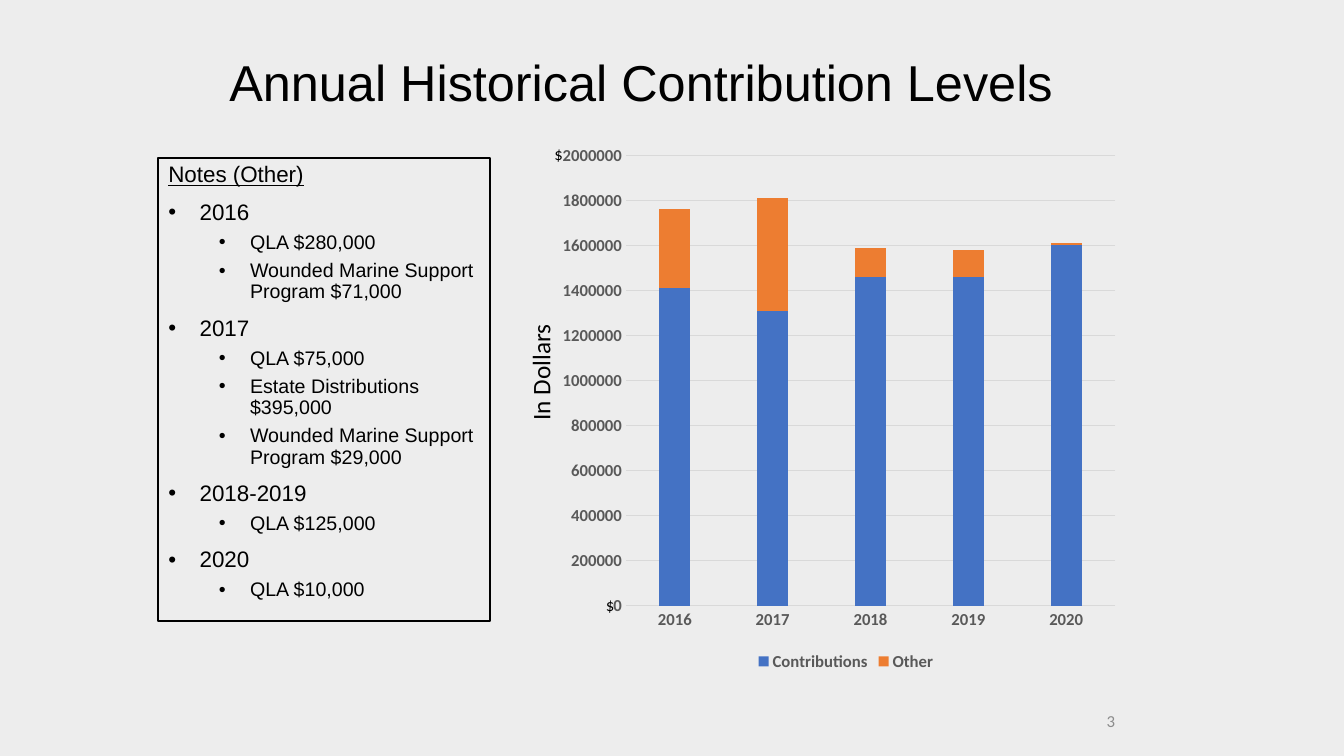
from pptx import Presentation
from pptx.chart.data import CategoryChartData as ChartData
from pptx.dml.color import RGBColor
from pptx.enum.chart import XL_CHART_TYPE as Kind, XL_LEGEND_POSITION as Spot, XL_TICK_MARK as Tick
from pptx.enum.text import MSO_ANCHOR as Anchor, MSO_AUTO_SIZE as Fit, PP_ALIGN as Align
from pptx.oxml import parse_xml
from pptx.oxml.ns import nsdecls
from pptx.util import Inches, Pt

NOTES = [
    ("2016", ["QLA $280,000", "Wounded Marine Support Program $71,000"]),
    ("2017", ["QLA $75,000", "Estate Distributions $395,000",
              "Wounded Marine Support Program $29,000"]),
    ("2018-2019", ["QLA $125,000"]),
    ("2020", ["QLA $10,000"]),
]
YEARS = ["2016", "2017", "2018", "2019", "2020"]
SERIES = [
    ("Contributions", "4472C4", [1410000, 1310000, 1460000, 1460000, 1600000]),
    ("Other", "ED7D31", [350000, 500000, 130000, 120000, 10000]),
]


def color(code):
    return RGBColor.from_string(code)


class Deck:
    ink, gray, rule, back = "000000", "595959", "D9D9D9", "EDEDED"
    head, base = "Arial", "Calibri"

    def __init__(self):
        self.prs = Presentation()
        self.prs.slide_width = Inches(13.33)
        self.prs.slide_height = Inches(7.5)
        self.slide = self.prs.slides.add_slide(self.prs.slide_layouts[1])
        fill = self.slide.background.fill
        fill.solid()
        fill.fore_color.rgb = color(self.back)

    def place(self, shape, box):
        shape.left, shape.top, shape.width, shape.height = map(Inches, box)

    def style(self, font, size, name, code, bold=False):
        font.size, font.name, font.bold = Pt(size), name, bold
        font.color.rgb = color(code)

    def title(self, text, box):
        shape = self.slide.shapes.title
        self.place(shape, box)
        frame = shape.text_frame
        frame.text = text
        frame.auto_size = Fit.NONE
        frame.vertical_anchor = Anchor.BOTTOM
        para = frame.paragraphs[0]
        para.alignment = Align.CENTER
        self.style(para.runs[0].font, 36, self.head, self.ink)

    def point(self, para, text, level=0, mark=True):
        para.text = text
        para.level = level
        para.line_spacing = 0.9
        para.space_before = Pt(5 if level else 10)
        self.style(para.runs[0].font, 14 if level else 16, self.head, self.ink)
        props = para._p.get_or_add_pPr()
        left = 0.31 + 0.5 * level if mark else 0
        props.set("marL", str(Inches(left)))
        props.set("indent", str(Inches(-0.31 if mark else 0)))
        tag = 'a:buChar char="•"' if mark else "a:buNone"
        props.append(parse_xml(f"<{tag} {nsdecls('a')}/>"))

    def notes(self, head, groups, box):
        shape = self.slide.placeholders[1]
        self.place(shape, box)
        shape.line.color.rgb = color(self.ink)
        shape.line.width = Pt(1.5)
        frame = shape.text_frame
        frame.auto_size = Fit.NONE
        first = frame.paragraphs[0]
        self.point(first, head, mark=False)
        first.runs[0].font.underline = True
        for year, items in groups:
            self.point(frame.add_paragraph(), year)
            for item in items:
                self.point(frame.add_paragraph(), item, 1)

    def label(self, text, box, size, code=ink, turn=0, wrap=False,
              align=Align.LEFT, anchor=Anchor.TOP):
        shape = self.slide.shapes.add_textbox(*map(Inches, box))
        shape.rotation = turn
        frame = shape.text_frame
        frame.text = text
        frame.word_wrap = wrap
        frame.vertical_anchor = anchor
        para = frame.paragraphs[0]
        para.alignment = align
        self.style(para.runs[0].font, size, self.base, code)

    def chart(self, years, series, box, area):
        data = ChartData()
        data.categories = years
        for name, _, vals in series:
            data.add_series(name, vals)
        chart = self.slide.shapes.add_chart(
            Kind.COLUMN_STACKED, *map(Inches, box), data).chart
        chart.has_title = False
        self.style(chart.font, 10, self.base, self.ink)
        plot = chart.plots[0]
        plot.gap_width, plot.overlap, plot.vary_by_categories = 219, 100, False
        for bar, (_, code, _) in zip(plot.series, series):
            bar.format.fill.solid()
            bar.format.fill.fore_color.rgb = color(code)
        chart.has_legend = True
        key = chart.legend
        key.position = Spot.BOTTOM
        key.include_in_layout = False
        cats, vals = chart.category_axis, chart.value_axis
        for axis in (cats, vals):
            axis.major_tick_mark = axis.minor_tick_mark = Tick.NONE
            self.style(axis.tick_labels.font, 12, self.base, self.gray, True)
        self.style(key.font, 12, self.base, self.gray, True)
        vals.minimum_scale, vals.maximum_scale, vals.major_unit = 0, 2000000, 200000
        vals.tick_labels.number_format = "General"
        vals.tick_labels.number_format_is_linked = False
        vals.format.line.fill.background()
        vals.has_major_gridlines = True
        for line in (cats.format.line, vals.major_gridlines.format.line):
            line.color.rgb = color(self.rule)
            line.width = Pt(0.75)
        self.layout(chart, box[2:], area)

    def layout(self, chart, size, area):
        part = chart._chartSpace.chart.plotArea
        for old in part.findall("{*}layout"):
            part.remove(old)
        sizes = "".join(f'<c:{tag} val="{val / full}"/>'
                        for tag, val, full in zip("xywh", area, size * 2))
        part.insert(0, parse_xml(
            f'<c:layout {nsdecls("c")}><c:manualLayout><c:layoutTarget val="inner"/>'
            f'<c:xMode val="edge"/><c:yMode val="edge"/>{sizes}'
            '</c:manualLayout></c:layout>'))


def main():
    deck = Deck()
    deck.title("Annual Historical Contribution Levels", (1.56, 0.59, 9.6, 0.57))
    deck.notes("Notes (Other)", NOTES, (1.57, 1.57, 3.29, 4.59))
    deck.label("3", (8.83, 6.95, 2.33, 0.4), 12, "8C8C8C", wrap=True,
               align=Align.RIGHT, anchor=Anchor.MIDDLE)
    deck.chart(YEARS, SERIES, (5.58, 0.87, 5.59, 5.83), (0.6, 0.67, 4.88, 4.47))
    deck.label("In Dollars", (4.78, 3.49, 1.16, 0.4), 18, turn=270)
    for left, top in ((5.4, 1.38), (5.91, 5.85)):
        deck.label("$", (left, top, 0.29, 0.3), 12)
    deck.prs.save("out.pptx")


if __name__ == "__main__":
    main()
